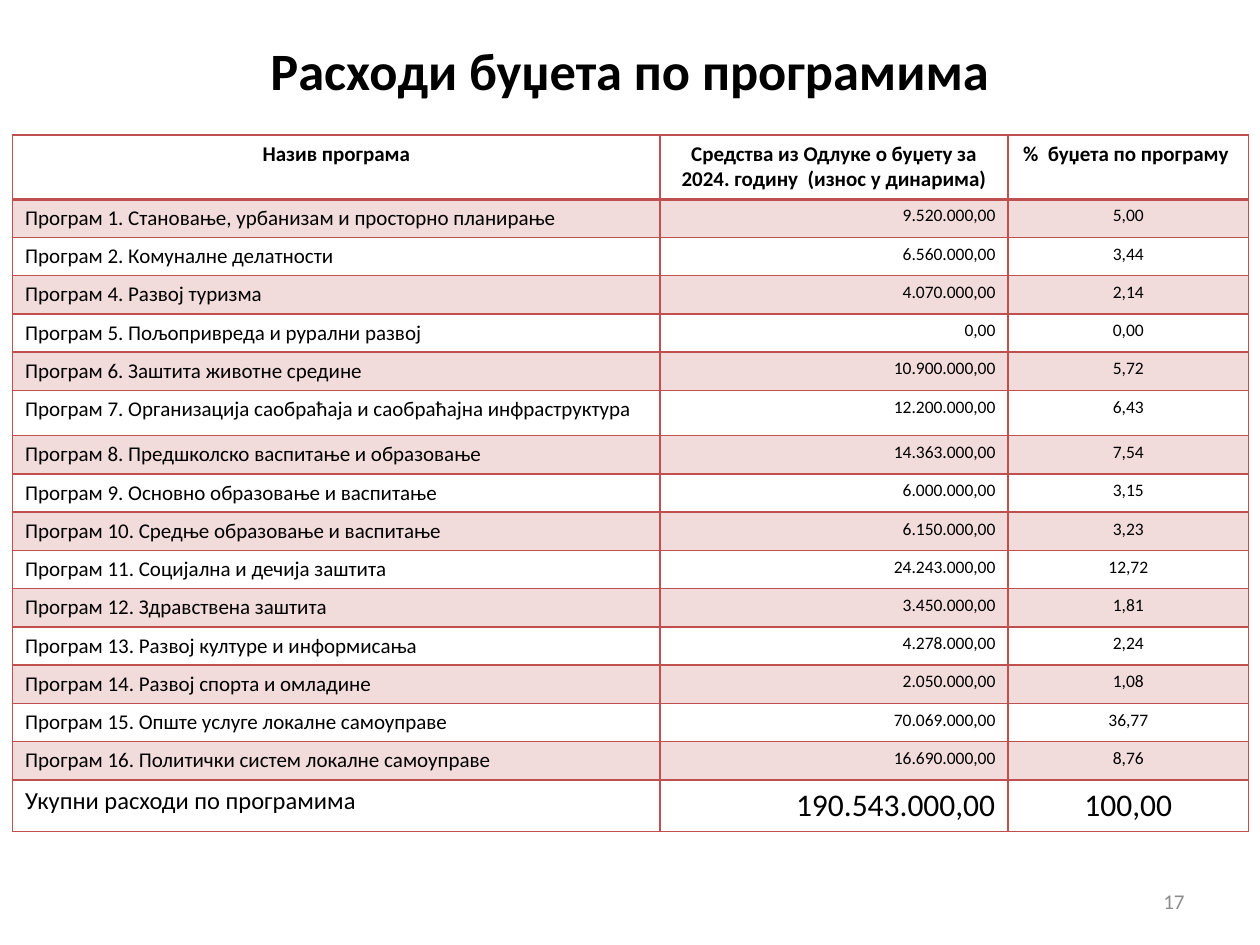
"""Build a slide with a table of budget expenditure by programme."""
from lxml import etree
from pptx import Presentation
from pptx.dml.color import RGBColor
from pptx.enum.text import MSO_ANCHOR, PP_ALIGN
from pptx.oxml.ns import qn
from pptx.util import Inches, Pt

LEFT, CENTER, RIGHT = PP_ALIGN.LEFT, PP_ALIGN.CENTER, PP_ALIGN.RIGHT
MIDDLE = MSO_ANCHOR.MIDDLE
BLACK = RGBColor(0x00, 0x00, 0x00)
GRAY = RGBColor(0x8C, 0x8C, 0x8C)
RED = RGBColor(0xC0, 0x50, 0x4D)

HEADER = (
    "Назив програма",
    "Средства из Одлуке о буџету за 2024. годину  (износ у динарима)",
    "%  буџета по програму ",
)
PROGRAMS = [
    ("Програм 1. Становање, урбанизам и просторно планирање", "9.520.000,00", "5,00"),
    ("Програм 2. Комуналне делатности", "6.560.000,00", "3,44"),
    ("Програм 4. Развој туризма", "4.070.000,00", "2,14"),
    ("Програм 5. Пољопривреда и рурални развој", "0,00", "0,00"),
    ("Програм 6. Заштита животне средине", "10.900.000,00", "5,72"),
    ("Програм 7. Организација саобраћаја и саобраћајна инфраструктура", "12.200.000,00", "6,43"),
    ("Програм 8. Предшколско васпитање и образовање", "14.363.000,00", "7,54"),
    ("Програм 9. Основно образовање и васпитање", "6.000.000,00", "3,15"),
    ("Програм 10. Средње образовање и васпитање", "6.150.000,00", "3,23"),
    ("Програм 11. Социјална и дечија заштита", "24.243.000,00", "12,72"),
    ("Програм 12. Здравствена заштита", "3.450.000,00", "1,81"),
    ("Програм 13. Развој културе и информисања", "4.278.000,00", "2,24"),
    ("Програм 14. Развој спорта и омладине", "2.050.000,00", "1,08"),
    ("Програм 15. Опште услуге локалне самоуправе", "70.069.000,00", "36,77"),
    ("Програм 16. Политички систем локалне самоуправе", "16.690.000,00", "8,76"),
]
TOTAL = ("Укупни расходи по програмима", "190.543.000,00", "100,00")
ROWS = [HEADER, *PROGRAMS, TOTAL]
LAST = len(ROWS) - 1
COLUMN_WIDTHS = (5.14, 2.76, 1.91)
ROW_HEIGHT = 0.3
SPECIAL_HEIGHTS = {0: 0.51, 6: 0.36, LAST: 0.41}
HEADER_STYLE = {"sizes": (12, 12, 12), "alignments": (CENTER, CENTER, CENTER), "bold": True}
PROGRAM_STYLE = {"sizes": (12, 10, 10), "alignments": (LEFT, RIGHT, CENTER), "bold": False}
TOTAL_STYLE = {"sizes": (14, 18, 18), "alignments": (LEFT, RIGHT, CENTER), "bold": False}
STYLES = {0: HEADER_STYLE, LAST: TOTAL_STYLE}


def write_text(text_frame, text, alignment, size, color=BLACK, bold=False):
    paragraph = text_frame.paragraphs[0]
    paragraph.alignment = alignment
    run = paragraph.add_run()
    run.text = text
    font_format = {"name": "Calibri", "size": Pt(size), "bold": bold}
    for attribute, value in font_format.items():
        setattr(run.font, attribute, value)
    run.font.color.rgb = color


def add_border(cell, side, points):
    properties = cell._tc.get_or_add_tcPr()
    line = etree.SubElement(properties, qn(f"a:ln{side}"), w=str(Pt(points)))
    fill = etree.SubElement(line, qn("a:solidFill"))
    etree.SubElement(fill, qn("a:srgbClr"), val=str(RED))


presentation = Presentation()
presentation.slide_width = Inches(10)
presentation.slide_height = Inches(7.5)
slide = presentation.slides.add_slide(presentation.slide_layouts[5])

title = slide.shapes.title
title_position = {"left": 0.74, "top": 0.13, "width": 8.52, "height": 0.85}
for attribute, value in title_position.items():
    setattr(title, attribute, Inches(value))
title.text_frame.vertical_anchor = MIDDLE
write_text(title.text_frame, "Расходи буџета по програмима", CENTER, 30, bold=True)

table_frame = slide.shapes.add_table(
    len(ROWS), len(HEADER), Inches(0.1), Inches(1.07), Inches(9.8), Inches(5.46)
)
table = table_frame.table
table.first_row = False
table.horz_banding = False
for column, width in zip(table.columns, COLUMN_WIDTHS):
    column.width = Inches(width)

for row_index, row_texts in enumerate(ROWS):
    table.rows[row_index].height = Inches(SPECIAL_HEIGHTS.get(row_index, ROW_HEIGHT))
    style = STYLES.get(row_index, PROGRAM_STYLE)
    top_width = 2 if row_index == 1 else 1
    bottom_width = 2 if row_index == 0 else 1
    for column_index, text in enumerate(row_texts):
        cell = table.cell(row_index, column_index)
        write_text(
            cell.text_frame,
            text,
            style["alignments"][column_index],
            style["sizes"][column_index],
            bold=style["bold"],
        )
        for side, points in zip("LRTB", (1, 1, top_width, bottom_width)):
            add_border(cell, side, points)
        if row_index % 2:
            cell.fill.solid()
            cell.fill.fore_color.rgb = RED
            fill_color = cell._tc.tcPr.find(f"{qn('a:solidFill')}/{qn('a:srgbClr')}")
            etree.SubElement(fill_color, qn("a:alpha"), val="20000")
        else:
            cell.fill.background()

slide_number = slide.shapes.add_textbox(Inches(7.17), Inches(6.95), Inches(2.33), Inches(0.4))
slide_number.text_frame.word_wrap = True
slide_number.text_frame.vertical_anchor = MIDDLE
write_text(slide_number.text_frame, "17", RIGHT, 12, GRAY)

presentation.save("out.pptx")
